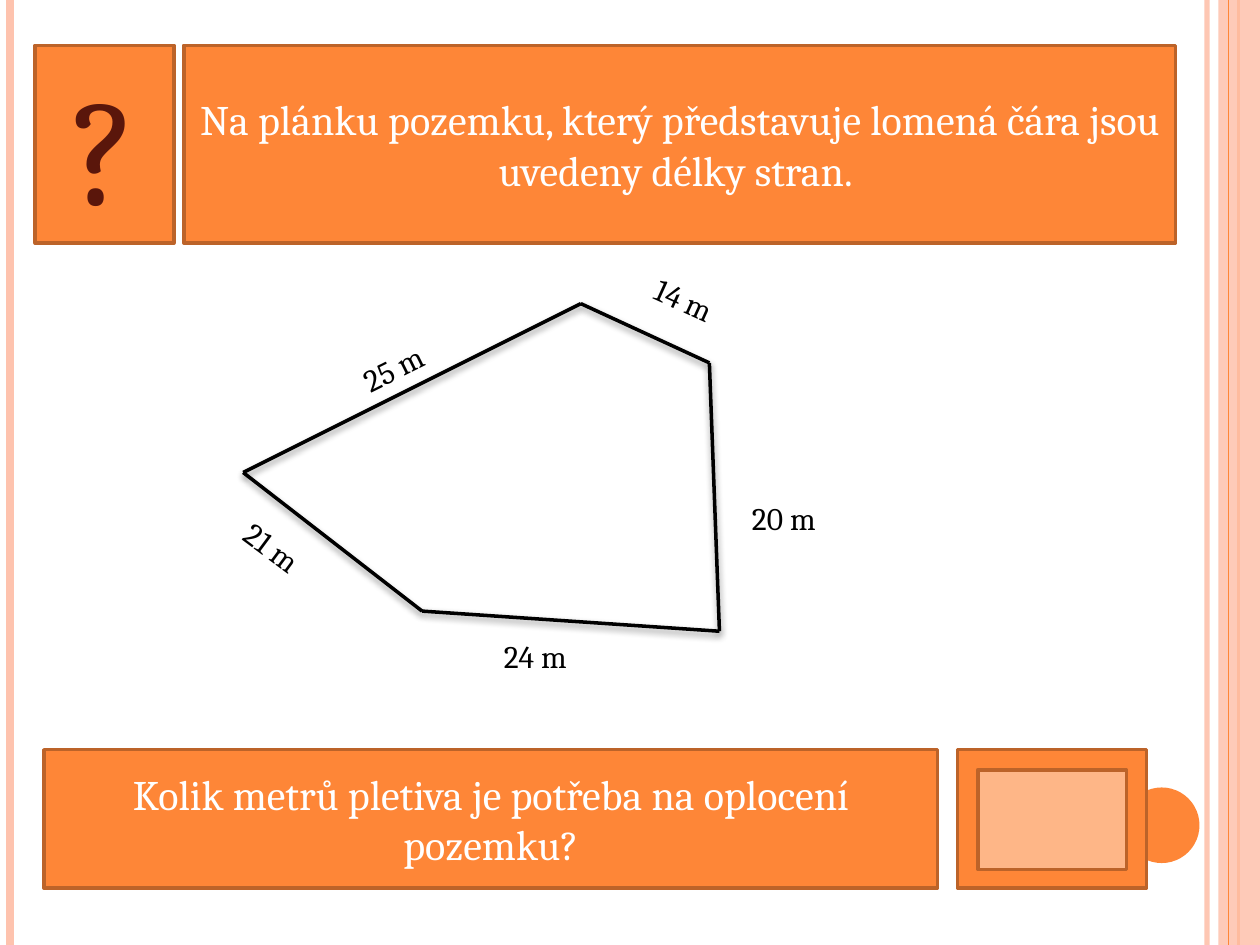
from lxml.etree import SubElement
from pptx import Presentation
from pptx.dml.color import RGBColor
from pptx.enum.shapes import MSO_CONNECTOR, MSO_SHAPE
from pptx.enum.text import MSO_ANCHOR, MSO_AUTO_SIZE, PP_ALIGN
from pptx.oxml.ns import qn
from pptx.util import Inches, Pt

COLORS = {
    "orange": "FE8637",
    "outline": "BC6329",
    "peach": "FEB687",
    "pale": "FEC3AE",
    "brown": "5A160B",
    "black": "000000",
    "white": "FFFFFF",
}
FONT = "Cambria"
PAGE_HEIGHT = 7.5

# Corners of the plot of land, in order around it
CORNERS = [(4.61, 2.41), (5.63, 2.88), (5.71, 5.01), (3.35, 4.85), (1.93, 3.75)]

# Text, left, top, width, rotation
SIDE_LABELS = [
    ("20 m", 5.87, 3.91, 1.34, 0),
    ("14 m", 5.08, 2.25, 1.02, 24.6),
    ("24 m", 3.9, 5.01, 1.42, 0),
    ("21 m", 1.77, 4.32, 1.26, 36.6),
    ("25 m", 2.72, 2.49, 1.73, 333.6),
]


def rgb(name):
    return RGBColor.from_string(COLORS[name])


def set_opacity(fill, percent):
    """Add an alpha value to a solid fill's colour element."""
    color = fill._xPr.find(qn("a:solidFill"))[0]
    SubElement(color, qn("a:alpha"), val=str(percent * 1000))


def add_shape(page, kind, left, top, width, height, fill, outline=None):
    shape = page.shapes.add_shape(
        kind, Inches(left), Inches(top), Inches(width), Inches(height))
    shape.shadow.inherit = False
    shape.fill.solid()
    shape.fill.fore_color.rgb = rgb(fill)
    if outline:
        shape.line.color.rgb = rgb(outline)
        shape.line.width = Pt(2)
    else:
        shape.line.fill.background()
    return shape


def add_panel(page, left, top, width, height, fill="orange"):
    return add_shape(page, MSO_SHAPE.RECTANGLE, left, top, width, height,
                     fill, "outline")


def write(shape, text, size, color, alignment):
    frame = shape.text_frame
    frame.word_wrap = True
    para = frame.paragraphs[0]
    para.text = text
    para.alignment = alignment
    para.font.name = FONT
    para.font.size = Pt(size)
    para.font.color.rgb = rgb(color)


def add_text_panel(page, left, top, width, height, text, size=24, color="white"):
    panel = add_panel(page, left, top, width, height)
    panel.text_frame.vertical_anchor = MSO_ANCHOR.MIDDLE
    write(panel, text, size, color, PP_ALIGN.CENTER)


def add_line(page, start, end, color, width):
    """Draw a line and return it with its empty effect list."""
    line = page.shapes.add_connector(
        MSO_CONNECTOR.STRAIGHT, *(Inches(value) for value in (*start, *end)))
    line.line.color.rgb = rgb(color)
    line.line.width = Pt(width)
    effects = SubElement(line._element.spPr, qn("a:effectLst"))
    return line, effects


def add_stripe(page, x, color, width):
    return add_line(page, (x, 0), (x, PAGE_HEIGHT), color, width)[0]


def add_side(page, start, end):
    """Draw one side of the plot with a soft shadow below it."""
    effects = add_line(page, start, end, "black", 2)[1]
    shadow = SubElement(effects, qn("a:outerShdw"), blurRad=str(Pt(4)),
                        dist=str(Pt(2)), dir="5400000", rotWithShape="0")
    color = SubElement(shadow, qn("a:srgbClr"), val=COLORS["black"])
    SubElement(color, qn("a:alpha"), val="40000")


def add_label(page, text, left, top, width, rotation):
    box = page.shapes.add_textbox(
        Inches(left), Inches(top), Inches(width), Inches(0.4))
    box.rotation = rotation
    write(box, text, 18, "black", PP_ALIGN.LEFT)
    box.text_frame.auto_size = MSO_AUTO_SIZE.SHAPE_TO_FIT_TEXT


def add_border(page):
    inner = add_stripe(page, 9.58, "pale", 3)
    set_opacity(inner.line.fill, 93)
    add_stripe(page, 0.08, "pale", 4.5)
    add_stripe(page, 9.83, "orange", 1.5)
    band = add_shape(page, MSO_SHAPE.RECTANGLE, 9.67, 0, 0.33, PAGE_HEIGHT, "pale")
    set_opacity(band.fill, 87)
    add_stripe(page, 9.75, "orange", 0.75)
    add_shape(page, MSO_SHAPE.OVAL, 8.92, 6.25, 0.6, 0.6, "orange")


def add_plot(page):
    for start, end in zip(CORNERS, CORNERS[1:] + CORNERS[:1]):
        add_side(page, start, end)
    for label in SIDE_LABELS:
        add_label(page, *label)


def main():
    deck = Presentation()
    deck.slide_width = Inches(10)
    deck.slide_height = Inches(PAGE_HEIGHT)
    page = deck.slides.add_slide(deck.slide_layouts[6])

    add_border(page)
    add_text_panel(page, 0.28, 0.36, 1.1, 1.57, "?", 88, "brown")
    add_text_panel(page, 1.46, 0.36, 7.87, 1.57,
                   "Na plánku pozemku, který představuje lomená čára jsou "
                   "uvedeny délky stran. ")
    add_plot(page)
    add_text_panel(page, 0.35, 5.95, 7.09, 1.1,
                   "Kolik metrů pletiva je potřeba na oplocení pozemku?")
    add_panel(page, 7.6, 5.95, 1.5, 1.1)
    add_panel(page, 7.76, 6.11, 1.18, 0.79, "peach")

    deck.save("out.pptx")


if __name__ == "__main__":
    main()
